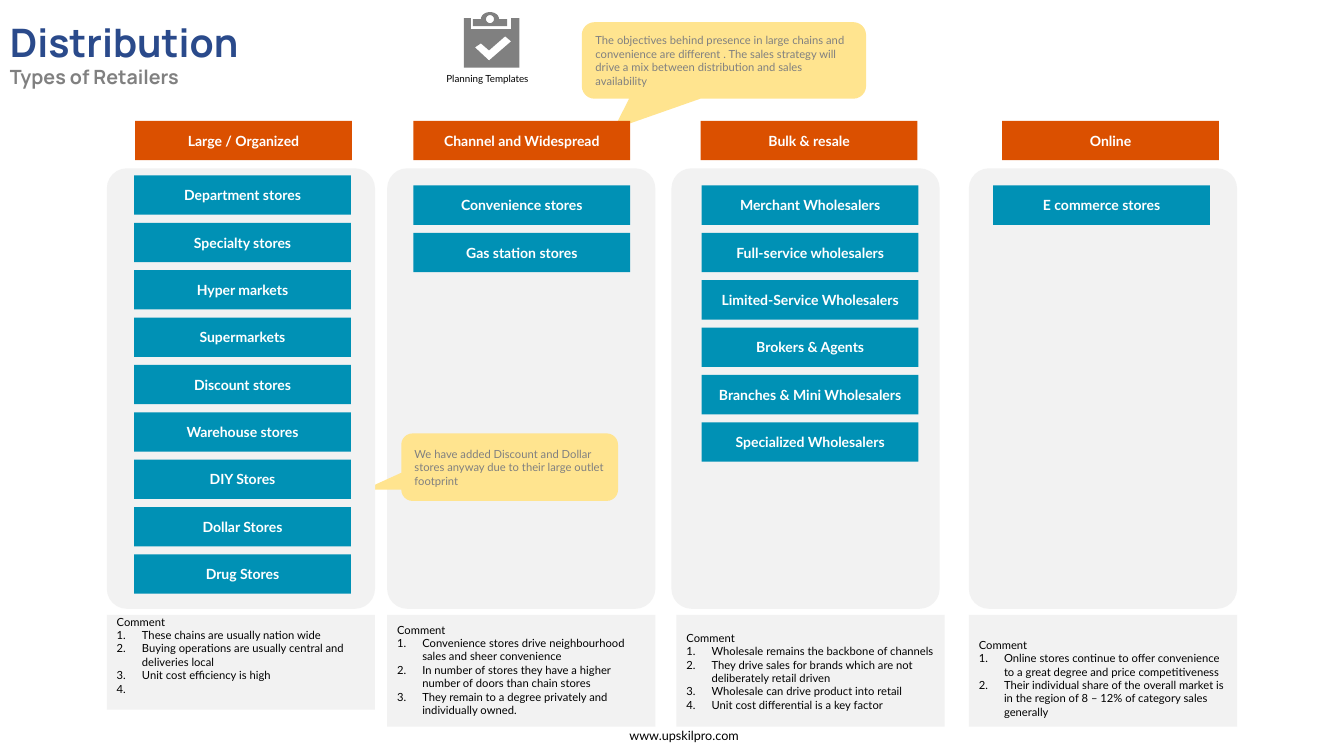
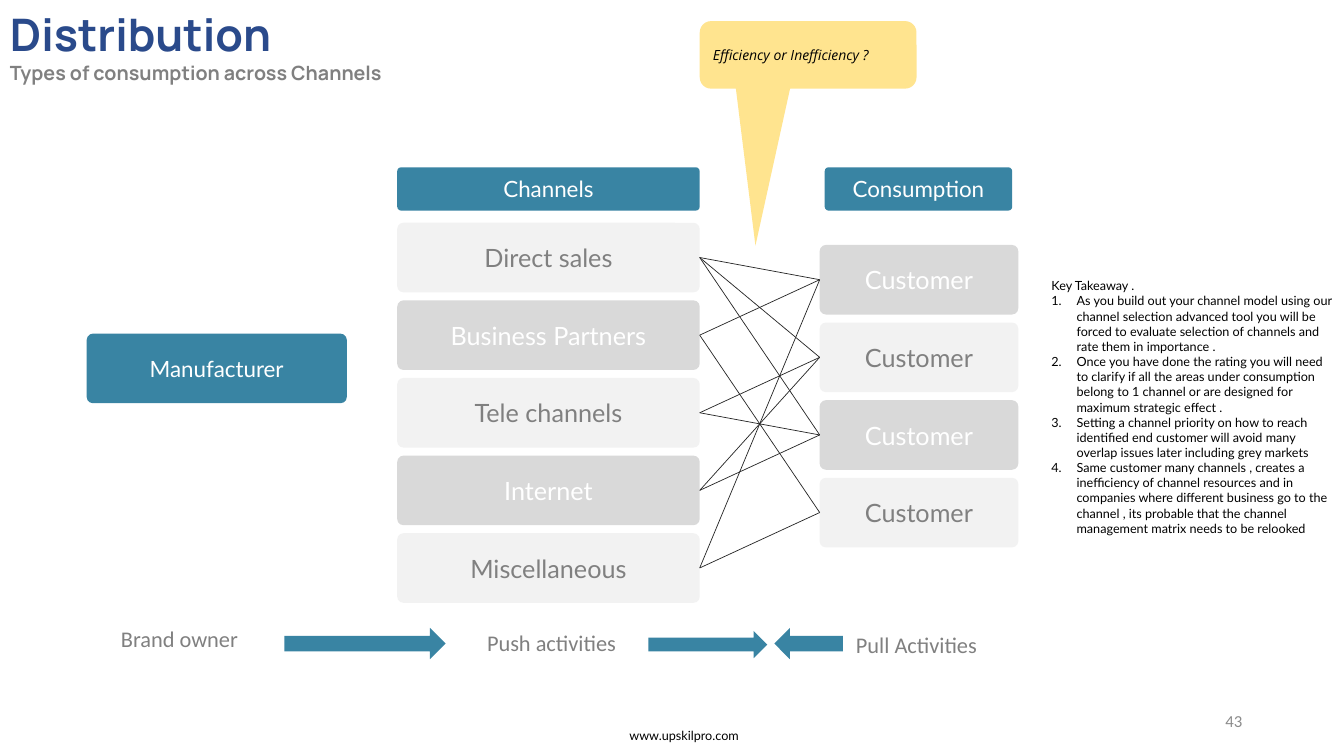
import math

from lxml import etree
from pptx import Presentation
from pptx.dml.color import RGBColor
from pptx.enum import shapes as sh, text as tx
from pptx.oxml import ns
from pptx.util import Inches, Pt

# Colours and fonts
NAVY = RGBColor(0x2A, 0x4A, 0x8B)
GREY = RGBColor(0x80, 0x80, 0x80)
PALE = RGBColor(0xF2, 0xF2, 0xF2)
SILVER = RGBColor(0xD9, 0xD9, 0xD9)
DIM = RGBColor(0x8C, 0x8C, 0x8C)
AQUA = RGBColor(0x00, 0x91, 0xB5)
TEAL = RGBColor(0x39, 0x84, 0xA3)
RUST = RGBColor(0xDB, 0x50, 0x00)
CREAM = RGBColor(0xFF, 0xE4, 0x8F)
INK = RGBColor(0x26, 0x26, 0x26)
WHITE = RGBColor(0xFF, 0xFF, 0xFF)
BLACK = RGBColor(0, 0, 0)
BODY, HEAD, PLAIN = "Lato", "Manrope", "Calibri"

KIND = sh.MSO_SHAPE
LEFT, MID, RIGHT = tx.PP_ALIGN.LEFT, tx.PP_ALIGN.CENTER, tx.PP_ALIGN.RIGHT
TOP, CENTRE = tx.MSO_ANCHOR.TOP, tx.MSO_ANCHOR.MIDDLE

# Columns of the retailer slide:
# heading, panel left, heading left, box left, first box top, boxes,
# note left, note height, note top inset, note points
COLS = [
    ("Large / Organized", 1.06, 1.34, 1.33, 1.74,
     ["Department stores", "Specialty stores", "Hyper markets",
      "Supermarkets", "Discount stores", "Warehouse stores",
      "DIY Stores", "Dollar Stores", "Drug Stores"],
     1.06, 0.94, 0,
     ["These chains are usually nation wide",
      "Buying operations are usually central and deliveries local",
      "Unit cost efficiency is high", " "]),
    ("Channel and Widespread", 3.84, 4.1, 4.1, 1.84,
     ["Convenience stores", "Gas station stores"],
     3.84, 1.11, 0.08,
     ["Convenience stores drive neighbourhood sales and sheer convenience",
      "In number of stores they have a higher number of doors than chain "
      "stores",
      "They remain to a degree privately and individually owned."]),
    ("Bulk & resale", 6.66, 6.95, 6.96, 1.84,
     ["Merchant Wholesalers", "Full-service wholesalers",
      "Limited-Service Wholesalers", "Brokers & Agents",
      "Branches & Mini Wholesalers", "Specialized Wholesalers"],
     6.71, 1.11, 0.16,
     ["Wholesale remains the backbone of channels",
      "They drive sales for brands which are not deliberately retail driven",
      "Wholesale can drive product into retail",
      "Unit cost differential is a key factor"]),
    ("Online", 9.61, 9.94, 9.85, 1.84, ["E commerce stores"],
     9.61, 1.11, 0.23,
     ["Online stores continue to offer convenience to a great degree and "
      "price competitiveness",
      "Their individual share of the overall market is in the region of "
      "8 – 12% of category sales generally"]),
]

# Channels of the consumption slide, each with the customers it reaches
ROUTES = [("Direct sales", (0, 1, 2)), ("Business Partners", (0, 3)),
          ("Tele channels", (1, 2)), ("Internet", (1, 2)),
          ("Miscellaneous", (0, 3))]
POINTS = [
    "As you build out your channel model using our channel selection advanced "
    "tool you will be forced to evaluate selection of channels and rate them "
    "in importance .",
    "Once you have done the rating you will need to clarify if all the areas "
    "under consumption belong to 1 channel or are designed for maximum "
    "strategic effect .",
    "Setting a channel priority on how to reach identified end customer will "
    "avoid many overlap issues later including grey markets",
    "Same customer many channels , creates a inefficiency of channel "
    "resources and in companies where different business go to the channel , "
    "its probable that the channel management matrix needs to be relooked",
]


# Text
def write(para, words, size, color, font=BODY, bold=False, slant=False,
          align=LEFT):
    para.alignment = align
    run = para.add_run()
    run.text = words
    face = run.font
    face.name, face.size, face.bold, face.italic = font, Pt(size), bold, slant
    face.color.rgb = color


def number(para):
    props = para._p.get_or_add_pPr()
    props.set("marL", str(Inches(0.25)))
    props.set("indent", str(-Inches(0.25)))
    etree.SubElement(props, ns.qn("a:buAutoNum"), type="arabicPeriod")


def add_list(frame, head, points, size):
    write(frame.paragraphs[0], head, size, BLACK)
    for point in points:
        para = frame.add_paragraph()
        number(para)
        write(para, point, size, BLACK)


def add_text(slide, x, y, w, h):
    frame = slide.shapes.add_textbox(
        Inches(x), Inches(y), Inches(w), Inches(h)).text_frame
    frame.word_wrap = True
    return frame


def label(slide, x, y, w, h, words, size, color, font=BODY, align=MID):
    frame = add_text(slide, x, y, w, h)
    write(frame.paragraphs[0], words, size, color, font, align=align)
    return frame


# Shapes
def paint(shape, fill):
    shape.shadow.inherit = False
    shape.fill.solid()
    shape.fill.fore_color.rgb = fill
    shape.line.fill.background()


def add_box(slide, kind, x, y, w, h, fill, adjust=()):
    box = slide.shapes.add_shape(
        kind, Inches(x), Inches(y), Inches(w), Inches(h))
    paint(box, fill)
    for i, value in enumerate(adjust):
        box.adjustments[i] = value
    box.text_frame.word_wrap = True
    box.text_frame.vertical_anchor = CENTRE
    return box


def add_tag(slide, x, y, fill, words):
    box = add_box(slide, KIND.RECTANGLE, x, y, 2.15, 0.39, fill)
    write(box.text_frame.paragraphs[0], words, 10, WHITE, bold=True,
          align=MID)


def add_card(slide, x, y, w, h, fill, words, size, color=WHITE):
    card = add_box(slide, KIND.ROUNDED_RECTANGLE, x, y, w, h, fill, [0.09])
    write(card.text_frame.paragraphs[0], words, size, color, align=MID)
    return card


def add_panel(slide, x):
    add_box(slide, KIND.ROUNDED_RECTANGLE, x, 1.67, 2.66, 4.37, PALE, [0.075])


def add_bubble(slide, x, y, w, h, tip, words, size, color, **style):
    box = add_box(slide, KIND.ROUNDED_RECTANGULAR_CALLOUT, x, y, w, h, CREAM,
                  [*tip, 0.167])
    write(box.text_frame.paragraphs[0], words, size, color, **style)


def add_note(slide, x, h, inset, points):
    frame = add_box(slide, KIND.RECTANGLE, x, 6.1, 2.66, h, PALE).text_frame
    frame.vertical_anchor = TOP
    frame.margin_top = Inches(inset)
    add_list(frame, "Comment", points, 8)


def add_link(slide, start, end):
    link = slide.shapes.add_connector(sh.MSO_CONNECTOR.STRAIGHT, 0, 0, 0, 0)
    link.begin_connect(start, 3)
    link.end_connect(end, 1)
    link.line.color.rgb = INK
    link.line.width = Pt(0.5)
    etree.SubElement(link._element.spPr, ns.qn("a:effectLst"))


def add_form(slide, *rings):
    rings = [[(Inches(x), Inches(y)) for x, y in ring] for ring in rings]
    form = slide.shapes.build_freeform(*rings[0][0])
    form.add_line_segments(rings[0][1:])
    for ring in rings[1:]:
        form.move_to(*ring[0])
        form.add_line_segments(ring[1:])
    paint(form.convert_to_shape(), GREY)


def arc(x, y, wide, high, sweep):
    turns = [math.radians(a) for a in range(0, sweep + 1, 15)]
    return [(x + wide * math.cos(t), y - high * math.sin(t)) for t in turns]


def add_icon(slide):
    # Clip with its ring, then the board with its tick
    add_form(slide,
             [(5.03, 0.26), (5.03, 0.19), *arc(4.86, 0.19, 0.09, 0.07, 180),
              (4.69, 0.19), (4.69, 0.26)],
             arc(4.86, 0.19, 0.04, 0.04, 360))
    add_form(slide,
             [(5.07, 0.18), (5.07, 0.29), (4.67, 0.29), (4.67, 0.18),
              (4.6, 0.18), (4.6, 0.67), (5.15, 0.67), (5.15, 0.18)],
             [(4.85, 0.6), (4.71, 0.47), (4.77, 0.43), (4.85, 0.5),
              (5.01, 0.36), (5.07, 0.41)])
    label(slide, 4.27, 0.67, 1.13, 0.22, "Planning Templates", 7, BLACK)


# Parts shared by the slides
def add_slide(deck, y, size, topic):
    slide = deck.slides.add_slide(deck.slide_layouts[6])
    frame = add_text(slide, 0, y, 4.47, 0.88)
    write(frame.paragraphs[0], "Distribution", size, NAVY, HEAD, True)
    write(frame.add_paragraph(), topic, 14, GREY, HEAD, True)
    label(slide, 5.22, 7.17, 3.13, 0.25, "www.upskilpro.com", 9, BLACK)
    return slide


def retail(deck):
    slide = add_slide(deck, 0.13, 28, "Types of Retailers")
    add_icon(slide)
    # The first panel covers the tip of a bubble, so it comes later
    for col in COLS[1:]:
        add_panel(slide, col[1])
    add_bubble(slide, 3.98, 4.3, 2.15, 0.67, (-0.671, 0.333),
               "We have added Discount and Dollar stores anyway due to their "
               "large outlet footprint", 8, GREY)
    add_bubble(slide, 5.77, 0.22, 2.82, 0.76, (-0.388, 0.897),
               "The objectives behind presence in large chains and "
               "convenience are different . The sales strategy will drive a "
               "mix between distribution and sales availability", 8, GREY)
    add_panel(slide, COLS[0][1])
    for head, _, head_x, box_x, top, names, note_x, high, inset, notes in COLS:
        add_tag(slide, head_x, 1.2, RUST, head)
        for i, name in enumerate(names):
            add_tag(slide, box_x, top + 0.47 * i, AQUA, name)
        add_note(slide, note_x, high, inset, notes)


def add_stack(slide, x, y, w, names):
    tones = [(PALE, GREY), (SILVER, WHITE)]
    shift = 0 if w == 3 else 1
    cards = []
    for i, name in enumerate(names):
        fill, color = tones[(i + shift) % 2]
        cards.append(add_card(slide, x, y + 0.77 * i, w, 0.69, fill, name, 18,
                              color))
    return cards


def demand(deck):
    slide = add_slide(deck, 0.02, 32, "Types of consumption across Channels")
    # Headings and stacks
    for x, y, w, h, words in [(0.86, 3.31, 2.58, 0.69, "Manufacturer"),
                              (3.94, 1.66, 3, 0.43, "Channels"),
                              (8.18, 1.66, 1.86, 0.43, "Consumption")]:
        add_card(slide, x, y, w, h, TEAL, words, 16)
    sales = add_stack(slide, 3.94, 2.21, 3, [name for name, _ in ROUTES])
    buyers = add_stack(slide, 8.13, 2.43, 1.97, ["Customer"] * 4)
    for card, (_, goals) in zip(sales, ROUTES):
        for goal in goals:
            add_link(slide, card, buyers[goal])
    # Flow along the bottom
    for x, y, words in [(0.75, 6.15, "Brand owner"),
                        (4.44, 6.19, "Push activities"),
                        (8.06, 6.21, "Pull Activities")]:
        label(slide, x, y, 2.06, 0.37, words, 16, GREY, PLAIN)
    add_box(slide, KIND.RIGHT_ARROW, 2.82, 6.23, 1.6, 0.31, TEAL)
    add_box(slide, KIND.RIGHT_ARROW, 6.43, 6.26, 1.18, 0.27, TEAL)
    add_box(slide, KIND.LEFT_ARROW, 7.68, 6.23, 0.68, 0.31, TEAL)
    # Remarks and page number
    add_list(add_text(slide, 10.33, 2.71, 3, 2.68), "Key Takeaway .", POINTS,
             9)
    add_bubble(slide, 6.94, 0.21, 2.15, 0.67, (-0.243, 2.824),
               "Efficiency or Inefficiency ?", 10, BLACK, font="Open Sans",
               slant=True)
    page = label(slide, 9.42, 6.95, 3, 0.4, "43", 12, DIM, PLAIN, RIGHT)
    page.vertical_anchor = CENTRE


def main():
    deck = Presentation()
    deck.slide_width, deck.slide_height = Inches(13.33), Inches(7.5)
    retail(deck)
    demand(deck)
    deck.save("out.pptx")


if __name__ == "__main__":
    main()
